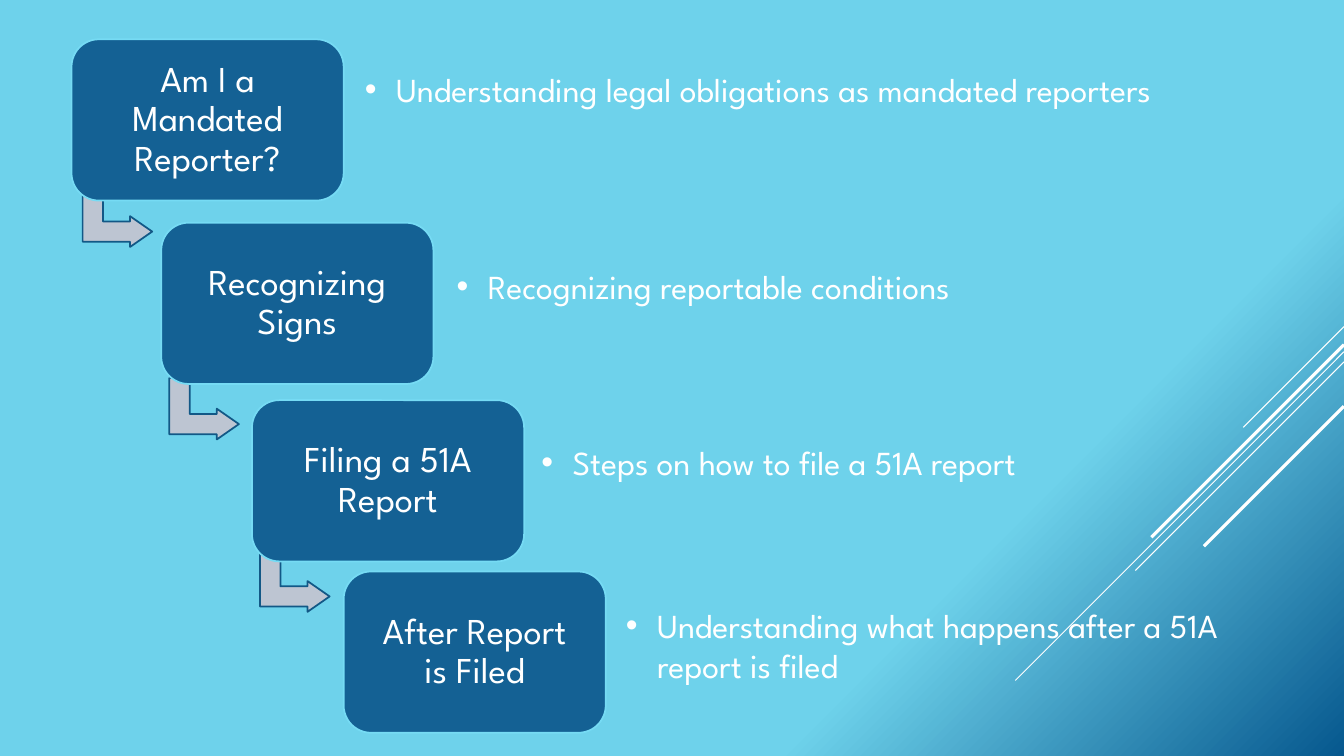
"""Build a four-step staircase slide about mandated reporting."""
from dataclasses import dataclass

from lxml.etree import SubElement
from pptx import Presentation
from pptx.dml.color import RGBColor as RGB
from pptx.enum.shapes import MSO_CONNECTOR as LINE, MSO_SHAPE as SHAPE
from pptx.enum.text import MSO_ANCHOR as ANCHOR, MSO_AUTO_SIZE as FIT, PP_ALIGN as ALIGN
from pptx.oxml.ns import qn
from pptx.util import Inches, Pt


@dataclass(frozen=True)
class Theme:
    sky: str = "6ED2EB"
    deep: str = "06588E"
    box: str = "146194"
    box_edge: str = "76DBF4"
    arrow: str = "BDC5D2"
    arrow_edge: str = "125886"
    white: str = "FFFFFF"
    font: str = "League Spartan"
    step_size: float = 26
    note_size: float = 24
    edge: float = 1.25


THEME = Theme()
CELL = 0.1
COLS, ROWS = 133.33, 75
BOX_ROWS = 16
ARROW_SIZE = (6.1, 6.9)
COMPARISON_LAYOUT = 4

STEPS = [
    {"text": "Am I a Mandated Reporter?", "box": (7.1, 3.9, 27), "arrow": (8.6, 18),
     "note": "Understanding legal obligations as mandated reporters",
     "area": (35.2, 6.3, 92.8, 12.1)},
    {"text": "Recognizing Signs", "box": (16, 22.1, 27), "arrow": (17.2, 37.1),
     "note": "Recognizing reportable conditions",
     "area": (44.3, 25.9, 75.5, 5)},
    {"text": "Filing a 51A Report", "box": (25, 39.7, 27), "arrow": (26.2, 54.2),
     "note": "Steps on how to file a 51A report",
     "area": (52.7, 43.3, 69.5, 5)},
    {"text": "After Report is Filed", "box": (34.1, 56.7, 26), "arrow": None,
     "note": "Understanding what happens after a 51A report is filed",
     "area": (61.1, 59.5, 66.9, 9.1)},
]
STREAKS = [(32.4, 10, 0.75), (34.9, 32.6, 0.75), (35.9, 20.7, 0.75),
           (34.2, 19.1, 2.25), (40.3, 13.9, 2.25)]


def cells(*counts):
    return [Inches(n * CELL) for n in counts]


def assign(obj, fmt):
    for name, value in fmt.items():
        setattr(obj, name, value)


def write(tf, text, size, frame_fmt, para_fmt):
    assign(tf, {"word_wrap": True, "auto_size": FIT.NONE, **frame_fmt})
    p = tf.paragraphs[0]
    assign(p, para_fmt)
    r = p.add_run()
    r.text = text
    assign(r.font, {"name": THEME.font, "size": Pt(size), "bold": False})
    r.font.color.rgb = RGB.from_string(THEME.white)
    return p


def paint_background(s):
    fill = s.background.fill
    fill.gradient()
    fill.gradient_angle = 315
    stops = [(0.73, THEME.sky), (1, THEME.deep)]
    for stop, (position, color) in zip(fill.gradient_stops, stops):
        stop.position = position
        stop.color.rgb = RGB.from_string(color)


def add_streak(s, row, length, weight):
    ends = cells(COLS, row, COLS - length, row + length)
    c = s.shapes.add_connector(LINE.STRAIGHT, *ends)
    c.line.color.rgb = RGB.from_string(THEME.white)
    c.line.width = Pt(weight)
    SubElement(c._element.spPr, qn("a:effectLst"))


def add_solid(s, kind, area, adjustments, fill, edge):
    sp = s.shapes.add_shape(kind, *cells(*area))
    sp.shadow.inherit = False
    for i, value in enumerate(adjustments):
        sp.adjustments[i] = value
    sp.fill.solid()
    sp.fill.fore_color.rgb = RGB.from_string(fill)
    sp.line.color.rgb = RGB.from_string(edge)
    sp.line.width = Pt(THEME.edge)
    return sp


def add_arrow(s, corner):
    sp = add_solid(s, SHAPE.BENT_UP_ARROW, (*corner, *ARROW_SIZE),
                   (0.33, 0.25, 0.36), THEME.arrow, THEME.arrow_edge)
    sp.rotation = 90


def add_box(s, text, col, row, width):
    sp = add_solid(s, SHAPE.ROUNDED_RECTANGLE, (col, row, width, BOX_ROWS),
                   (0.17,), THEME.box, THEME.box_edge)
    sides = ("left", "right", "top", "bottom")
    margins = {f"margin_{side}": Inches(0.19) for side in sides}
    write(sp.text_frame, text, THEME.step_size,
          {"vertical_anchor": ANCHOR.MIDDLE, **margins},
          {"alignment": ALIGN.CENTER, "line_spacing": 0.9})


def fill_note(s, ph, text, area):
    assign(ph, dict(zip(("left", "top", "width", "height"), cells(*area))))
    p = write(ph.text_frame, text, THEME.note_size,
              {"vertical_anchor": ANCHOR.TOP},
              {"alignment": ALIGN.LEFT, "space_before": Pt(0)})
    pPr = p._p.get_or_add_pPr()
    indent = Inches(0.31)
    pPr.set("marL", str(indent))
    pPr.set("indent", str(-indent))
    SubElement(pPr, qn("a:buFont")).set("typeface", "Arial")
    SubElement(pPr, qn("a:buChar")).set("char", "•")
    s.shapes._spTree.append(ph._element)


def main():
    prs = Presentation()
    prs.slide_width, prs.slide_height = cells(COLS, ROWS)
    s = prs.slides.add_slide(prs.slide_layouts[COMPARISON_LAYOUT])
    title, *notes = s.placeholders
    s.shapes._spTree.remove(title._element)
    paint_background(s)
    for streak in STREAKS:
        add_streak(s, *streak)
    for step, ph in zip(STEPS, notes):
        if step["arrow"]:
            add_arrow(s, step["arrow"])
        add_box(s, step["text"], *step["box"])
        fill_note(s, ph, step["note"], step["area"])
    prs.save("out.pptx")


if __name__ == "__main__":
    main()
